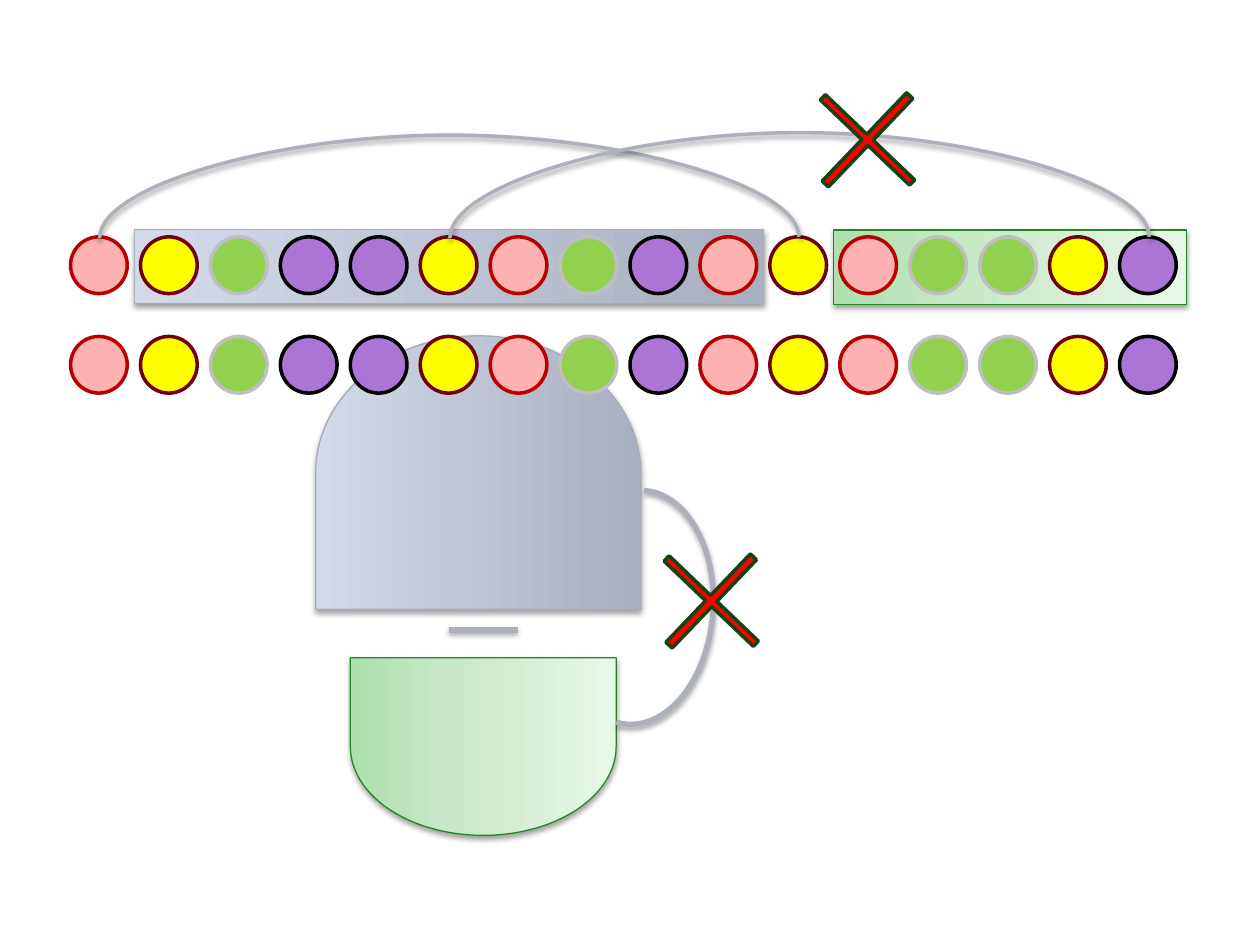
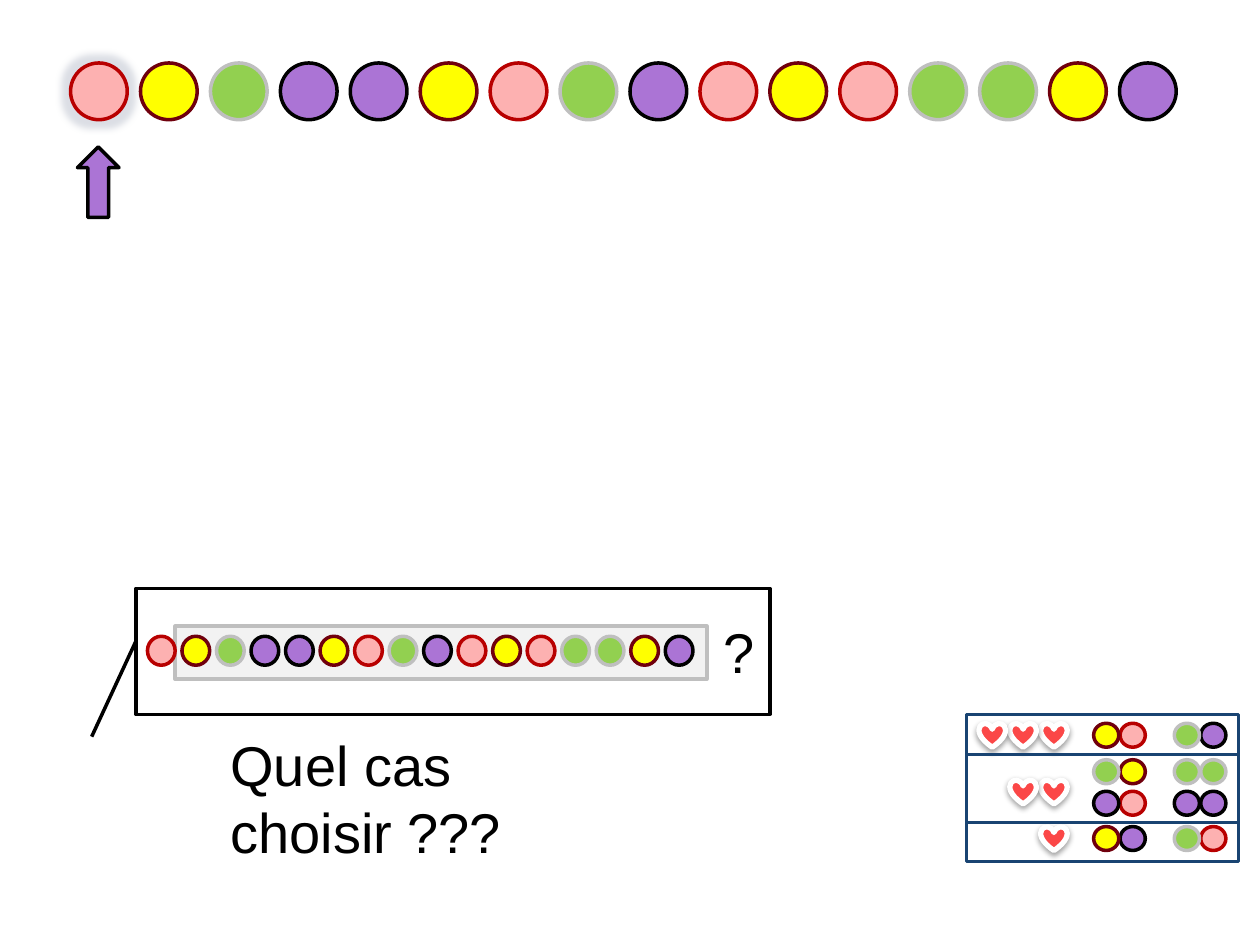
"""Build two slides on pairing beads in a sequence and choosing a case."""
from lxml.etree import SubElement, fromstring
from pptx import Presentation
from pptx.dml.color import RGBColor
from pptx.enum.shapes import MSO_CONNECTOR, MSO_SHAPE
from pptx.oxml.ns import qn
from pptx.util import Inches, Pt

BLACK = RGBColor(0x00, 0x00, 0x00)
WHITE = RGBColor(0xFF, 0xFF, 0xFF)
PALE_GREY = RGBColor(0xF2, 0xF2, 0xF2)
SILVER = RGBColor(0xBF, 0xBF, 0xBF)
STEEL = RGBColor(0xA7, 0xAC, 0xB8)
CURVE_GREY = RGBColor(0xAB, 0xB0, 0xBC)
GLOW_GREY = RGBColor(0xA8, 0xAF, 0xBF)
DARK_GREEN = RGBColor(0x24, 0x87, 0x26)
CROSS_GREEN = RGBColor(0x14, 0x44, 0x14)
RED = RGBColor(0xFF, 0x00, 0x00)
HEART_RED = RGBColor(0xFB, 0x47, 0x47)
NAVY = RGBColor(0x19, 0x44, 0x72)
PURPLE = RGBColor(0xAB, 0x74, 0xD5)

BEADS = {
    "R": (RGBColor(0xFD, 0xB1, 0xB1), RGBColor(0xB8, 0x00, 0x00)),
    "Y": (RGBColor(0xFF, 0xFF, 0x00), RGBColor(0x70, 0x00, 0x0D)),
    "G": (RGBColor(0x92, 0xD0, 0x50), SILVER),
    "P": (PURPLE, BLACK),
}
SEQUENCE = "RYGPPYRGPRYRGGYP"
GREEN_FADE = [(0, RGBColor(0xAD, 0xE0, 0xAD)), (35, RGBColor(0xC6, 0xE8, 0xC6)),
              (100, RGBColor(0xE9, 0xF7, 0xE9))]
BLUE_FADE = [(0, GLOW_GREY), (100, RGBColor(0xD2, 0xD9, 0xE9))]
DRAWING = 'xmlns:a="http://schemas.openxmlformats.org/drawingml/2006/main"'


def style(item, line, weight, fill=None, fade=None, shadow=False, glow=False):
    """Set the line, fill and effects of a shape or connector."""
    item.line.color.rgb = line
    item.line.width = Pt(weight)
    properties = item._element.spPr
    if fade:
        stops = "".join(f'<a:gs pos="{place * 1000}"><a:srgbClr val="{color}"/></a:gs>'
                        for place, color in fade)
        properties.find(qn("a:prstGeom")).addnext(fromstring(
            f'<a:gradFill {DRAWING} rotWithShape="1"><a:gsLst>{stops}</a:gsLst>'
            '<a:lin ang="16200000" scaled="0"/></a:gradFill>'))
    elif fill is not None:
        item.fill.solid()
        item.fill.fore_color.rgb = fill
    elif hasattr(item, "fill"):
        item.fill.background()
    effect = ""
    if shadow:
        effect = ('<a:outerShdw blurRad="40000" dist="21000" dir="5400000" rotWithShape="0">'
                  '<a:srgbClr val="000000"><a:alpha val="36000"/></a:srgbClr></a:outerShdw>')
    elif glow:
        effect = (f'<a:glow rad="101600"><a:srgbClr val="{GLOW_GREY}">'
                  '<a:alpha val="40000"/></a:srgbClr></a:glow>')
    properties.append(fromstring(f"<a:effectLst {DRAWING}>{effect}</a:effectLst>"))


def write_text(page, text, left, top, width, height, size=32, font="Arial",
               color=BLACK, wrap=False, right_margin=0.1):
    """Add a text box with one formatted paragraph."""
    box = page.shapes.add_textbox(Inches(left), Inches(top), Inches(width), Inches(height))
    box.text_frame.word_wrap = wrap
    box.text_frame.margin_right = Inches(right_margin)
    span = box.text_frame.paragraphs[0].add_run()
    span.text = text
    span.font.size = Pt(size)
    span.font.name = font
    span.font.color.rgb = color


deck = Presentation()
deck.slide_width = Inches(10)
deck.slide_height = Inches(7.5)
blank = deck.slide_layouts[6]
pairing = deck.slides.add_slide(blank)
choice = deck.slides.add_slide(blank)

for kind, left, top, width, height, turn, line, fade in [
    (MSO_SHAPE.RECTANGLE, 7.72, 0.72, 0.59, 2.8, 90, DARK_GREEN, GREEN_FADE),
    (MSO_SHAPE.RECTANGLE, 3.27, -0.38, 0.59, 4.99, 270, STEEL, BLUE_FADE),
    (MSO_SHAPE.FLOWCHART_DELAY, 3.13, 4.87, 1.41, 2.11, 90, DARK_GREEN, GREEN_FADE),
    (MSO_SHAPE.FLOWCHART_DELAY, 2.71, 2.46, 2.17, 2.58, 270, STEEL, BLUE_FADE),
]:
    region = pairing.shapes.add_shape(kind, Inches(left), Inches(top),
                                      Inches(width), Inches(height))
    region.rotation = turn
    style(region, line, 0.75, fade=fade, shadow=True)

dash = pairing.shapes.add_connector(MSO_CONNECTOR.STRAIGHT, Inches(3.56), Inches(5),
                                    Inches(4.11), Inches(5))
style(dash, CURVE_GREY, 3, shadow=True)

callout = choice.shapes.add_shape(MSO_SHAPE.LINE_CALLOUT_1, Inches(1.08), Inches(4.67),
                                  Inches(5.03), Inches(1))
for index, value in enumerate([0.417, 0, 1.177, -0.07]):
    callout.adjustments[index] = value
style(callout, BLACK, 2, fill=WHITE)
rest = choice.shapes.add_shape(MSO_SHAPE.RECTANGLE, Inches(1.39), Inches(4.97),
                               Inches(4.22), Inches(0.42))
style(rest, SILVER, 2, fill=PALE_GREY)

for page, left, top, pitch, width, height, glowing in [
    (pairing, 0.56, 1.88, 0.555, 0.45, 0.45, False),
    (pairing, 0.56, 2.67, 0.555, 0.45, 0.45, False),
    (choice, 0.56, 0.5, 0.555, 0.45, 0.45, True),
    (choice, 1.17, 5.05, 0.274, 0.22, 0.23, False),
]:
    for index, letter in enumerate(SEQUENCE):
        fill, line = BEADS[letter]
        bead = page.shapes.add_shape(MSO_SHAPE.OVAL, Inches(left + index * pitch),
                                     Inches(top), Inches(width), Inches(height))
        style(bead, line, 2, fill=fill, glow=glowing and index == 0)

for left, rise in [(3.56, 0.83), (6.34, 0.85)]:
    link = pairing.shapes.add_connector(MSO_CONNECTOR.CURVE, Inches(left), Inches(-0.89),
                                        Inches(left + 0.01), Inches(4.66))
    frame = link._element.spPr.find(qn("a:xfrm"))
    for name, value in [("rot", "5400000"), ("flipH", "1"), ("flipV", "1")]:
        frame.set(name, value)
    guides = link._element.spPr.find(qn("a:prstGeom")).find(qn("a:avLst"))
    SubElement(guides, qn("a:gd"), name="adj1", fmla=f"val {round(rise / 0.01 * 100000)}")
    style(link, CURVE_GREY, 2, shadow=True)

arc = pairing.shapes.add_shape(MSO_SHAPE.ARC, Inches(4.43), Inches(3.89),
                               Inches(1.23), Inches(1.86))
arc.adjustments[0] = 162
arc.adjustments[1] = 57.2
arc.rotation = 4.2
style(arc, CURVE_GREY, 3, shadow=True)

for left, top in [(5.16, 4.28), (6.4, 0.62)]:
    cross = pairing.shapes.add_shape(MSO_SHAPE.CROSS, Inches(left), Inches(top),
                                     Inches(0.97), Inches(0.98))
    cross.adjustments[0] = 0.47
    cross.rotation = 313.7
    style(cross, CROSS_GREEN, 2, fill=RED)

pointer = choice.shapes.add_shape(MSO_SHAPE.RIGHT_ARROW, Inches(0.5), Inches(1.28),
                                  Inches(0.56), Inches(0.33))
pointer.rotation = 270
style(pointer, BLACK, 2, fill=PURPLE)
write_text(choice, "?", 5.64, 4.85, 0.41, 0.64)
write_text(choice, "Quel cas choisir ???", 1.73, 5.75, 3.77, 0.64, wrap=True, right_margin=1.2)

legend = choice.shapes.add_group_shape()
panel = legend.shapes.add_shape(MSO_SHAPE.RECTANGLE, Inches(7.67), Inches(5.67),
                                Inches(2.16), Inches(1.17))
style(panel, NAVY, 1.5, fill=WHITE)
for top, letters in [(5.74, "RYPG"), (6.03, "YGGG"), (6.28, "RPPP"), (6.56, "PYRG")]:
    for left, letter in zip([8.89, 8.68, 9.53, 9.32], letters):
        fill, line = BEADS[letter]
        bead = legend.shapes.add_shape(MSO_SHAPE.OVAL, Inches(left), Inches(top),
                                       Inches(0.2), Inches(0.19))
        style(bead, line, 2, fill=fill)
for top, count in [(5.74, 3), (6.19, 2), (6.56, 1)]:
    for index in range(count):
        heart = legend.shapes.add_shape(MSO_SHAPE.HEART, Inches(8.26 - index * 0.245),
                                        Inches(top), Inches(0.21), Inches(0.19))
        style(heart, WHITE, 3, fill=HEART_RED, shadow=True)
for top in [5.99, 6.53]:
    divider = legend.shapes.add_connector(MSO_CONNECTOR.STRAIGHT, Inches(7.67), Inches(top),
                                          Inches(9.83), Inches(top))
    style(divider, NAVY, 1.5)

deck.save("out.pptx")
